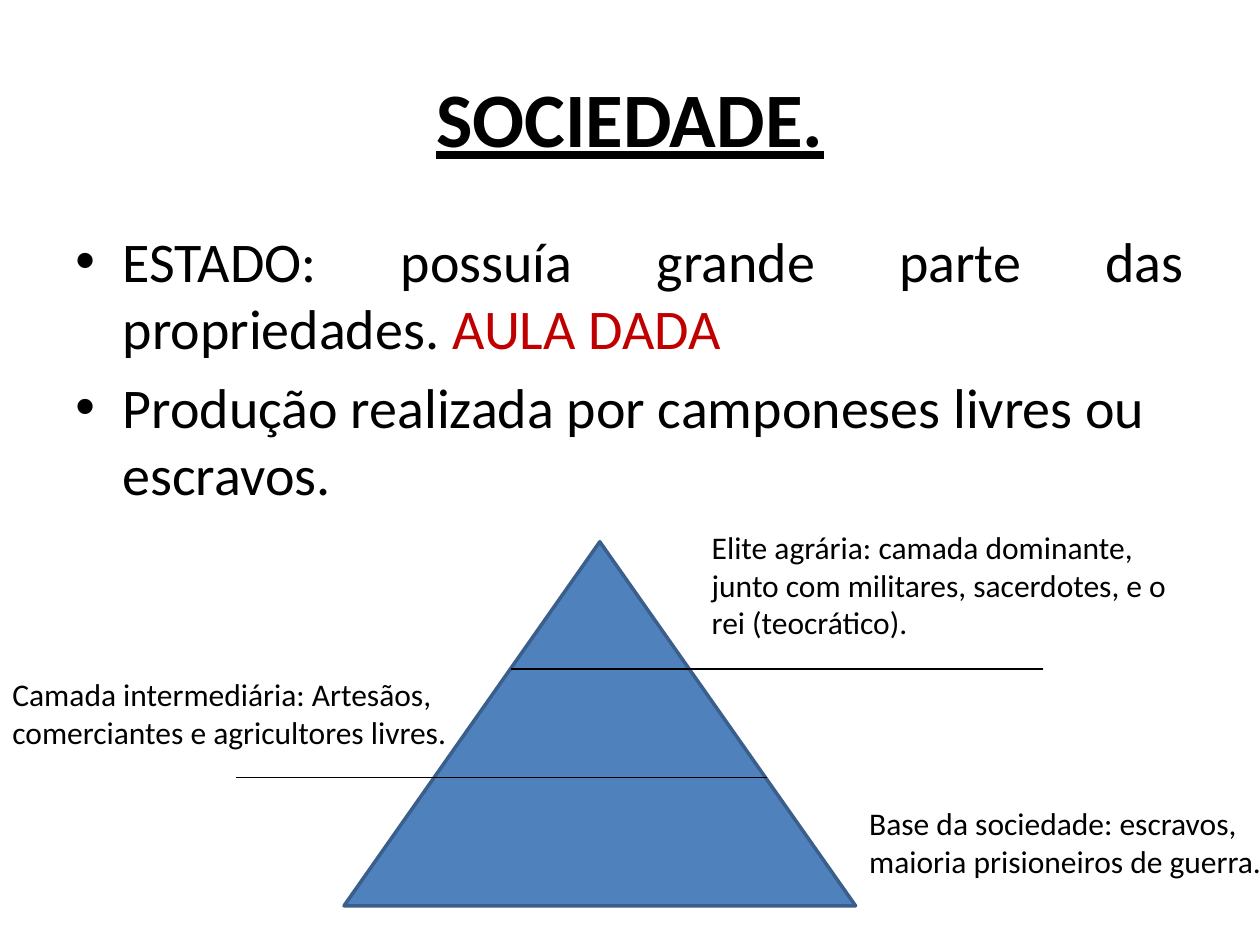
import pptx
import pptx.dml.color
import pptx.enum.shapes
import pptx.enum.text
import pptx.oxml
import pptx.oxml.ns
import pptx.util

Pt = pptx.util.Pt
Align = pptx.enum.text.PP_ALIGN
Anchor = pptx.enum.text.MSO_ANCHOR
BLACK = "000000"
TITLE = {"size": Pt(44), "bold": True, "underline": True}
BODY = {"size": Pt(32)}
LABEL = {"size": Pt(18)}
LABELS = [
    ("Elite agrária: camada dominante, junto com militares, sacerdotes, e o rei (teocrático).",
     (399.6, 298, 286.6, 72.7)),
    ("Camada intermediária: Artesãos, comerciantes e agricultores livres.",
     (0, 382.3, 286.6, 51)),
    ("Base da sociedade: escravos, maioria prisioneiros de guerra.",
     (489.6, 455.8, 242, 51)),
]
RULES = [(596.2, 292.3, 382.3), (438.5, 134.6, 444.2)]


def color(code):
    return pptx.dml.color.RGBColor.from_string(code)


def assign(item, values):
    for name, value in values.items():
        setattr(item, name, value)


def add_box(slide, spot, anchor=Anchor.TOP):
    frame = slide.shapes.add_textbox(*map(Pt, spot)).text_frame
    assign(frame, {"word_wrap": True, "vertical_anchor": anchor})
    return frame


def add_run(para, text, style, code=BLACK):
    run = para.add_run()
    run.text = text
    assign(run.font, {"name": "Calibri", **style})
    run.font.color.rgb = color(code)


def add_bullet(para):
    props = para._p.get_or_add_pPr()
    indent = Pt(27)
    props.set("marL", str(indent))
    props.set("indent", str(-indent))
    space = pptx.oxml.ns.nsdecls("a")
    props.append(pptx.oxml.parse_xml(f'<a:buFont {space} typeface="Arial"/>'))
    props.append(pptx.oxml.parse_xml(f'<a:buChar {space} char="•"/>'))


def add_title(slide):
    para = add_box(slide, (36, 21.6, 648, 90), Anchor.MIDDLE).paragraphs[0]
    para.alignment = Align.CENTER
    add_run(para, "SOCIEDADE.", TITLE)


def add_body(slide):
    frame = add_box(slide, (36, 126, 648, 356.4))
    state, work = frame.paragraphs[0], frame.add_paragraph()
    for para in (state, work):
        add_bullet(para)
    state.alignment = Align.JUSTIFY
    work.space_before = Pt(6.4)
    add_run(state, "ESTADO: possuía grande parte das propriedades. ", BODY)
    add_run(state, "AULA DADA", BODY, "C00000")
    add_run(work, "Produção realizada por camponeses livres ou escravos.", BODY)


def add_pyramid(slide):
    kind = pptx.enum.shapes.MSO_SHAPE.ISOSCELES_TRIANGLE
    shape = slide.shapes.add_shape(kind, *map(Pt, (196.6, 309.6, 292.3, 208)))
    shape.shadow.inherit = False
    shape.fill.solid()
    shape.fill.fore_color.rgb = color("4F81BD")
    shape.line.color.rgb = color("3A5F8C")
    shape.line.width = Pt(2)


def add_rule(slide, start, end, top):
    kind = pptx.enum.shapes.MSO_CONNECTOR.STRAIGHT
    rule = slide.shapes.add_connector(kind, Pt(start), Pt(top), Pt(end), Pt(top))
    rule.line.color.rgb = color(BLACK)
    rule.line.width = Pt(0.75)
    space = pptx.oxml.ns.nsdecls("a")
    rule._element.spPr.append(pptx.oxml.parse_xml(f"<a:effectLst {space}/>"))


def add_label(slide, text, spot):
    add_run(add_box(slide, spot).paragraphs[0], text, LABEL)


def main():
    deck = pptx.Presentation()
    assign(deck, {"slide_width": Pt(720), "slide_height": Pt(540)})
    slide = deck.slides.add_slide(deck.slide_layouts[6])
    add_title(slide)
    add_body(slide)
    add_pyramid(slide)
    for rule in RULES:
        add_rule(slide, *rule)
    for text, spot in LABELS:
        add_label(slide, text, spot)
    deck.save("out.pptx")


if __name__ == "__main__":
    main()
